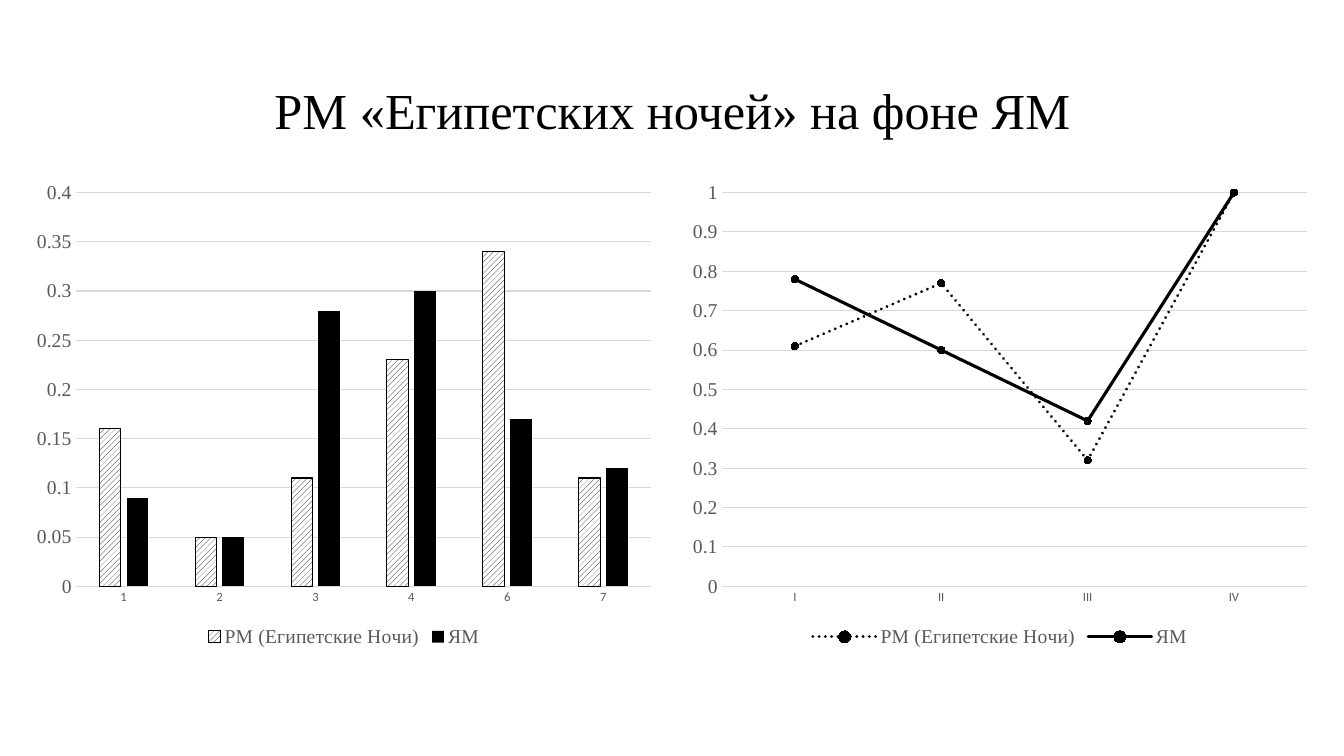
from dataclasses import dataclass

from pptx import Presentation
from pptx.chart.axis import CategoryAxis, ValueAxis
from pptx.chart.chart import Chart
from pptx.chart.data import CategoryChartData
from pptx.chart.series import BarSeries, LineSeries
from pptx.dml.color import RGBColor
from pptx.dml.line import LineFormat
from pptx.enum.chart import XL_CHART_TYPE as ChartType
from pptx.enum.chart import XL_LEGEND_POSITION as LegendPosition
from pptx.enum.chart import XL_MARKER_STYLE as MarkerStyle
from pptx.enum.chart import XL_TICK_MARK as TickMark
from pptx.enum.dml import MSO_LINE_DASH_STYLE as Dash
from pptx.enum.dml import MSO_PATTERN_TYPE as Pattern
from pptx.enum.text import MSO_ANCHOR as Anchor
from pptx.enum.text import PP_ALIGN as Align
from pptx.slide import Slide
from pptx.text.text import Font
from pptx.util import Emu, Pt

EMU_PER_PX = 914400 / 100.8


def px(length: int) -> Emu:
    return Emu(round(length * EMU_PER_PX))


@dataclass(frozen=True)
class Theme:
    ink: RGBColor = RGBColor(0x00, 0x00, 0x00)
    paper: RGBColor = RGBColor(0xFF, 0xFF, 0xFF)
    label: RGBColor = RGBColor(0x59, 0x59, 0x59)
    grid: RGBColor = RGBColor(0xD9, 0xD9, 0xD9)
    serif: str = "Times New Roman"
    sans: str = "Calibri"
    title_size: Pt = Pt(36)
    chart_size: Pt = Pt(10)
    category_size: Pt = Pt(9)
    value_size: Pt = Pt(14)
    thin: Pt = Pt(0.75)
    thick: Pt = Pt(2.25)


@dataclass(frozen=True)
class ChartPanel:
    kind: ChartType
    left: int
    categories: list[str]
    first_values: list[float]
    second_values: list[float]
    maximum: float


THEME = Theme()
TITLE = "РМ «Египетских ночей» на фоне ЯМ"
FIRST_NAME, SECOND_NAME = "РМ (Египетские Ночи)", "ЯМ"
CHART_TOP, CHART_WIDTH, CHART_HEIGHT = 172, 640, 480

BARS = ChartPanel(
    ChartType.COLUMN_CLUSTERED, 24, ["1", "2", "3", "4", "6", "7"],
    [0.16, 0.05, 0.11, 0.23, 0.34, 0.11],
    [0.09, 0.05, 0.28, 0.3, 0.17, 0.12], 0.4,
)
LINES = ChartPanel(
    ChartType.LINE_MARKERS, 680, ["I", "II", "III", "IV"],
    [0.61, 0.77, 0.32, 1], [0.78, 0.6, 0.42, 1], 1,
)


def set_font(font: Font, name: str, size: Pt, color: RGBColor) -> None:
    font.name, font.size = name, size
    font.color.rgb = color


def set_line(line: LineFormat, color: RGBColor, width: Pt) -> None:
    line.color.rgb = color
    line.width = width


def add_title(page: Slide) -> None:
    box = page.shapes.add_textbox(px(93), px(40), px(1159), px(146))
    frame = box.text_frame
    frame.word_wrap = True
    frame.vertical_anchor = Anchor.MIDDLE
    para = frame.paragraphs[0]
    para.text = TITLE
    para.alignment = Align.CENTER
    para.line_spacing = 0.9
    set_font(para.font, THEME.serif, THEME.title_size, THEME.ink)


def style_axes(category: CategoryAxis, value: ValueAxis, maximum: float) -> None:
    for axis in (category, value):
        axis.major_tick_mark = axis.minor_tick_mark = TickMark.NONE
    category.has_major_gridlines = False
    set_font(category.tick_labels.font, THEME.sans, THEME.category_size, THEME.label)
    set_line(category.format.line, THEME.grid, THEME.thin)

    value.minimum_scale, value.maximum_scale = 0, maximum
    value.has_major_gridlines = True
    set_font(value.tick_labels.font, THEME.serif, THEME.value_size, THEME.label)
    set_line(value.major_gridlines.format.line, THEME.grid, THEME.thin)
    value.format.line.fill.background()


def add_panel(page: Slide, panel: ChartPanel) -> Chart:
    data = CategoryChartData()
    data.categories = panel.categories
    data.add_series(FIRST_NAME, panel.first_values)
    data.add_series(SECOND_NAME, panel.second_values)
    chart = page.shapes.add_chart(
        panel.kind, px(panel.left), px(CHART_TOP), px(CHART_WIDTH), px(CHART_HEIGHT), data
    ).chart
    chart.has_title = False
    set_font(chart.font, THEME.sans, THEME.chart_size, THEME.ink)
    chart.plots[0].vary_by_categories = False
    style_axes(chart.category_axis, chart.value_axis, panel.maximum)

    chart.has_legend = True
    chart.legend.position = LegendPosition.BOTTOM
    chart.legend.include_in_layout = False
    set_font(chart.legend.font, THEME.serif, THEME.value_size, THEME.label)
    return chart


def style_bars(hatched: BarSeries, plain: BarSeries) -> None:
    hatch = hatched.format.fill
    hatch.patterned()
    hatch.pattern = Pattern.WIDE_UPWARD_DIAGONAL
    hatch.fore_color.rgb, hatch.back_color.rgb = THEME.ink, THEME.paper
    set_line(hatched.format.line, THEME.ink, THEME.thin)
    plain.format.fill.solid()
    plain.format.fill.fore_color.rgb = THEME.ink
    plain.format.line.fill.background()


def style_line(series: LineSeries) -> None:
    series.smooth = False
    set_line(series.format.line, THEME.ink, THEME.thick)
    marker = series.marker
    marker.style, marker.size = MarkerStyle.CIRCLE, 5
    marker.format.fill.solid()
    marker.format.fill.fore_color.rgb = THEME.ink
    set_line(marker.format.line, THEME.ink, THEME.thin)


def main() -> None:
    deck = Presentation()
    deck.slide_width, deck.slide_height = px(1344), px(756)
    page = deck.slides.add_slide(deck.slide_layouts[6])

    # Title
    add_title(page)

    # Line chart
    line_chart = add_panel(page, LINES)
    line_series = line_chart.plots[0].series
    for series in line_series:
        style_line(series)
    line_series[0].format.line.dash_style = Dash.ROUND_DOT
    for outline in line_chart.element.xpath(".//c:ser/c:spPr/a:ln"):
        outline.set("cap", "rnd")

    # Column chart
    bar_plot = add_panel(page, BARS).plots[0]
    bar_plot.gap_width, bar_plot.overlap = 219, -27
    style_bars(*bar_plot.series)

    deck.save("out.pptx")


if __name__ == "__main__":
    main()
